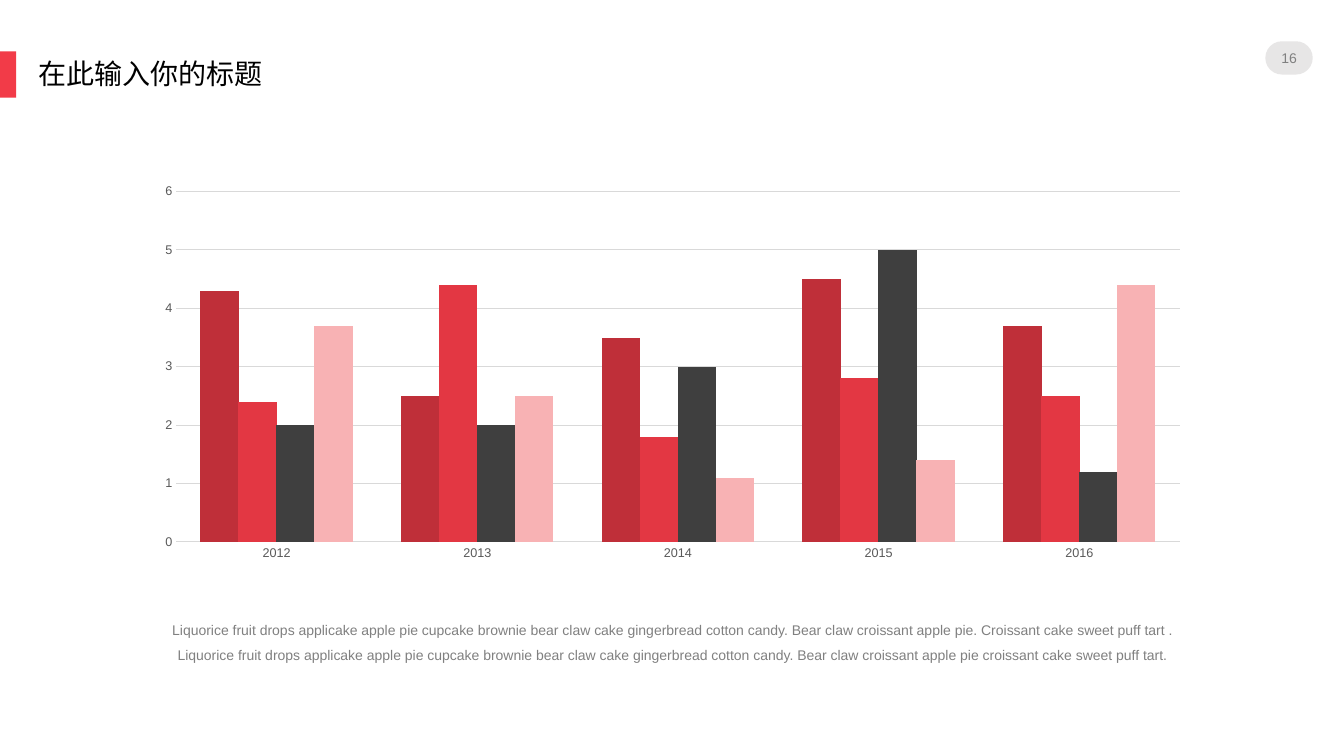
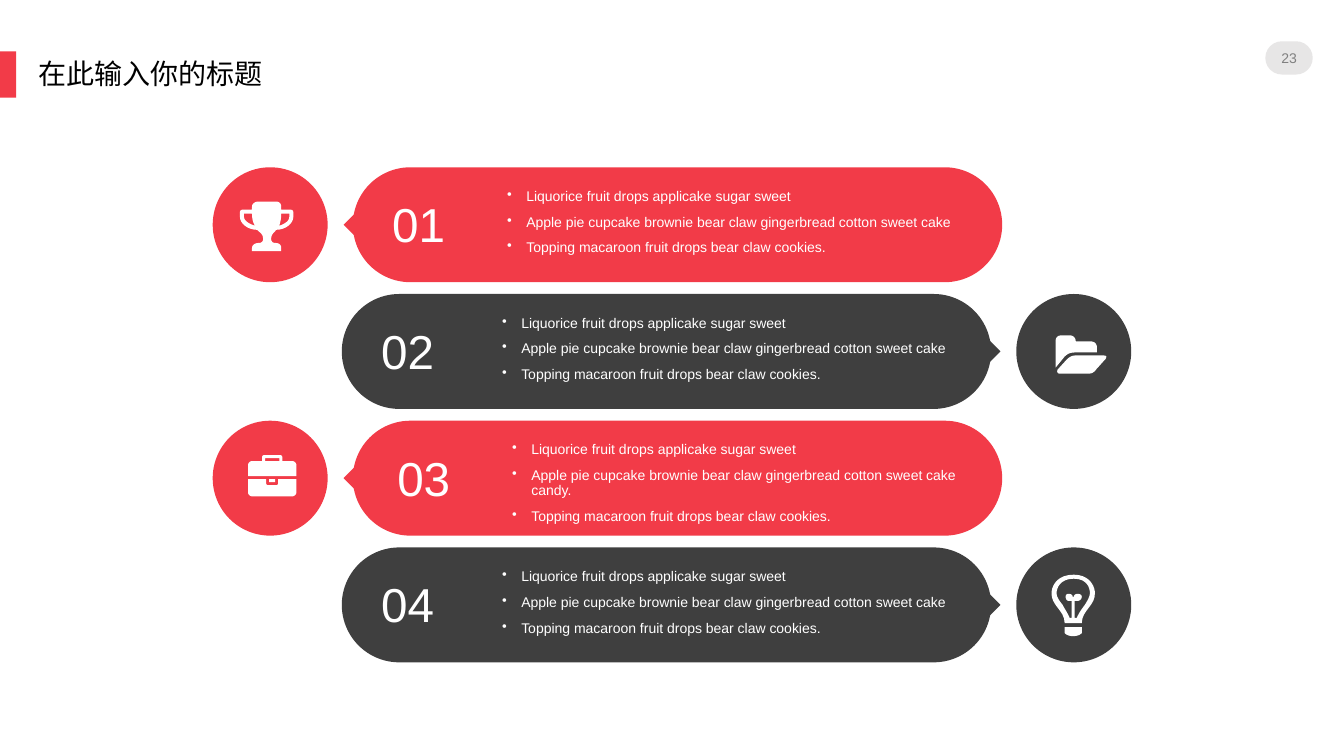
"""Builds a clustered column slide and a four-banner list slide."""
import pptx
import pptx.chart.data
import pptx.dml.color
import pptx.enum.chart
import pptx.enum.shapes
import pptx.enum.text
import pptx.util
from lxml import etree

WIDTH, HEIGHT = 13.33, 7.5
FONT = "Arial"
COLORS = {
    "red": "F23B48", "dark": "3F3F3F", "white": "FFFFFF", "black": "000000",
    "badge": "E7E6E6", "gray": "808080", "axis": "595959", "grid": "D9D9D9",
    "crimson": "BF2F39", "scarlet": "E33743", "pink": "F8B2B4",
}
TITLE = "在此输入你的标题"

YEARS = ["2012", "2013", "2014", "2015", "2016"]
SERIES = [
    ("Series 1", "crimson", (4.3, 2.5, 3.5, 4.5, 3.7)),
    ("Series 2", "scarlet", (2.4, 4.4, 1.8, 2.8, 2.5)),
    ("Series 3", "dark", (2, 2, 3, 5, 1.2)),
    ("Series 4", "pink", (3.7, 2.5, 1.1, 1.4, 4.4)),
]
CAPTION = (
    "Liquorice fruit drops applicake apple pie cupcake brownie bear claw cake gingerbread "
    "cotton candy. Bear claw croissant apple pie. Croissant cake sweet puff tart . "
    "Liquorice fruit drops applicake apple pie cupcake brownie bear claw cake gingerbread "
    "cotton candy. Bear claw croissant apple pie croissant cake sweet puff tart."
)

POINTS = [
    "Liquorice fruit drops applicake sugar sweet",
    "Apple pie cupcake brownie bear claw gingerbread cotton sweet cake",
    "Topping macaroon fruit drops bear claw cookies.",
]
LONG_POINTS = [POINTS[0], POINTS[1] + " candy.", POINTS[2]]

# Outlines in hundredths of an inch: pairs are corners, sixes are cubic curves.
TROPHY = [
    [(41, 12), (41, 17, 40, 21, 39, 24), (45, 22, 49, 19, 49, 15), (49, 12)],
    [(4, 12), (4, 15), (4, 19, 9, 22, 15, 24), (13, 21, 12, 17, 12, 12)],
    [(18, 0), (36, 0), (39, 0, 41, 2, 41, 5), (41, 8), (50, 8), (52, 8, 53, 9, 53, 11),
     (53, 15), (53, 22, 45, 28, 36, 28), (34, 31, 31, 32, 31, 37), (31, 40, 33, 41, 35, 41),
     (39, 41, 41, 43, 41, 46), (41, 49), (12, 49), (12, 46), (12, 43, 15, 41, 19, 41),
     (21, 41, 23, 40, 23, 37), (23, 32, 20, 31, 17, 28), (8, 28, 0, 22, 0, 15), (0, 11),
     (0, 9, 1, 8, 3, 8), (12, 8), (12, 5), (12, 2, 15, 0, 18, 0)],
]
FOLDER = [
    [(19, 20), (48, 20), (50, 20, 51, 21, 50, 22), (50, 23, 50, 23, 49, 24), (40, 34),
     (39, 36, 36, 38, 33, 38), (4, 38), (2, 38, 1, 36, 2, 34), (11, 24),
     (13, 22, 16, 20, 19, 20)],
    [(6, 0), (14, 0), (17, 0, 20, 2, 20, 6), (35, 6), (39, 6, 41, 9, 41, 12), (41, 17),
     (19, 17), (15, 17, 12, 18, 9, 21), (0, 32), (0, 6), (0, 2, 2, 0, 6, 0)],
]
BRIEFCASE = [
    [(21, 24), (27, 24), (27, 27), (21, 27)],
    [(0, 24), (18, 24), (18, 28), (18, 29, 19, 30, 20, 30), (28, 30),
     (29, 30, 30, 29, 30, 28), (30, 24), (48, 24), (48, 37), (48, 39, 46, 41, 44, 41),
     (4, 41), (2, 41, 0, 39, 0, 37)],
    [(17, 3), (17, 6), (31, 6), (31, 3)],
    [(16, 0), (32, 0), (33, 0, 34, 1, 34, 2), (34, 6), (44, 6), (46, 6, 48, 8, 48, 10),
     (48, 21), (0, 21), (0, 10), (0, 8, 2, 6, 4, 6), (14, 6), (14, 2),
     (14, 1, 15, 0, 16, 0)],
]
BULB = [
    [(31, 48), (31, 35, 45, 31, 44, 17), (43, 9, 37, 0, 23, 0), (8, 0, 2, 9, 1, 17),
     (0, 31, 14, 35, 14, 48)],
    [(6, 18), (6, 14, 9, 4, 23, 4), (37, 4, 39, 14, 39, 18), (39, 22, 37, 25, 34, 30),
     (31, 34, 28, 38, 26, 43), (24, 43), (24, 26), (27, 26), (29, 26, 31, 24, 31, 22),
     (31, 20, 29, 19, 27, 19), (25, 19, 23, 20, 23, 22), (22, 22),
     (22, 20, 20, 19, 18, 19), (16, 19, 15, 20, 15, 22), (15, 24, 16, 26, 18, 26),
     (21, 26), (21, 43), (19, 43), (17, 38, 14, 34, 12, 30), (8, 25, 6, 22, 6, 18)],
    [(14, 52), (31, 52), (31, 58), (29, 60, 26, 61, 22, 61), (19, 61, 16, 60, 14, 58)],
]

BANNERS = [
    {"points": POINTS, "icon": TROPHY, "icon_at": (0.27, 0.34), "shift": 0},
    {"points": POINTS, "icon": FOLDER, "icon_at": (0.39, 0.41), "shift": 0},
    {"points": LONG_POINTS, "icon": BRIEFCASE, "icon_at": (0.35, 0.34), "shift": 0.05},
    {"points": POINTS, "icon": BULB, "icon_at": (0.34, 0.27), "shift": 0},
]
BANNER_TOP, BANNER_PITCH, BANNER_HEIGHT, BANNER_WIDTH = 1.66, 1.257, 1.14, 6.44
NOTCH = 0.21

SHAPE = pptx.enum.shapes.MSO_SHAPE
CENTER = pptx.enum.text.PP_ALIGN.CENTER
LEFT = pptx.enum.text.PP_ALIGN.LEFT


def rgb(name):
    return pptx.dml.color.RGBColor.from_string(COLORS[name])


def inches(*lengths):
    return [pptx.util.Inches(length) for length in lengths]


def paint(shape, color):
    shape.shadow.inherit = False
    shape.fill.solid()
    shape.fill.fore_color.rgb = rgb(color)
    shape.line.fill.background()


def add_block(page, kind, at, color, corner=None, turn=0):
    shape = page.shapes.add_shape(kind, *inches(*at))
    paint(shape, color)
    if corner is not None:
        shape.adjustments[0] = corner
    shape.rotation = turn


def set_bullet(paragraph):
    properties = paragraph._p.get_or_add_pPr()
    properties.set("marL", str(pptx.util.Inches(0.19)))
    properties.set("indent", str(pptx.util.Inches(-0.19)))
    etree.SubElement(properties, pptx.oxml.ns.qn("a:buChar")).set("char", "•")


def add_text(page, at, lines, size, color, align=LEFT, spacing=0.9, inset=0,
             middle=False, bullets=False):
    frame = page.shapes.add_textbox(*inches(*at)).text_frame
    frame.word_wrap = True
    if inset is not None:
        frame.margin_left = frame.margin_right = pptx.util.Inches(inset)
        frame.margin_top = frame.margin_bottom = pptx.util.Inches(inset)
    if middle:
        frame.vertical_anchor = pptx.enum.text.MSO_ANCHOR.MIDDLE
    for index, line in enumerate(lines):
        paragraph = frame.add_paragraph() if index else frame.paragraphs[0]
        paragraph.text = line
        if bullets:
            set_bullet(paragraph)
        paragraph.alignment = align
        paragraph.line_spacing = spacing
        if index:
            paragraph.space_before = pptx.util.Pt(7.5)
        paragraph.font.size = pptx.util.Pt(size)
        paragraph.font.name = FONT
        paragraph.font.color.rgb = rgb(color)


def flatten(contour, steps=8):
    points = [contour[0]]
    for segment in contour[1:]:
        if len(segment) == 2:
            points.append(segment)
            continue
        controls = [points[-1], segment[:2], segment[2:4], segment[4:]]
        for step in range(1, steps + 1):
            t = step / steps
            weights = ((1 - t) ** 3, 3 * t * (1 - t) ** 2, 3 * t * t * (1 - t), t ** 3)
            points.append(tuple(sum(weight * control[axis] for weight, control
                                    in zip(weights, controls)) for axis in (0, 1)))
    return [(x * 100, y * 100) for x, y in points]


def add_icon(page, contours, left, top):
    outlines = [flatten(contour) for contour in contours]
    builder = page.shapes.build_freeform(*outlines[0][0], scale=pptx.util.Inches(1) / 10000)
    for index, outline in enumerate(outlines):
        if index:
            builder.move_to(*outline[0])
        builder.add_line_segments(outline[1:], close=True)
    paint(builder.convert_to_shape(*inches(left, top)), "white")


def add_page(deck, number):
    page = deck.slides.add_slide(deck.slide_layouts[6])
    add_block(page, SHAPE.RECTANGLE, (0, 0.51, 0.16, 0.46), "red")
    add_block(page, SHAPE.ROUNDED_RECTANGLE, (12.55, 0.41, 0.47, 0.33), "badge", 0.5)
    add_text(page, (12.55, 0.36, 0.47, 0.43), [number], 10, "gray", CENTER, 1, middle=True)
    add_text(page, (0.28, 0.55, 4.17, 0.46), [TITLE], 20, "black", inset=None)
    return page


def add_columns(page):
    data = pptx.chart.data.CategoryChartData()
    data.categories = YEARS
    for name, _, values in SERIES:
        data.add_series(name, values)
    chart = page.shapes.add_chart(pptx.enum.chart.XL_CHART_TYPE.COLUMN_CLUSTERED,
                                  *inches(1.43, 1.75, 10.48, 3.89), data).chart
    chart.has_legend = chart.has_title = False
    chart.font.name = FONT
    chart.font.size = pptx.util.Pt(10)
    plot = chart.plots[0]
    plot.gap_width, plot.overlap, plot.vary_by_categories = 126, 1, False
    for series, (_, color, _) in zip(plot.series, SERIES):
        series.format.fill.solid()
        series.format.fill.fore_color.rgb = rgb(color)
    scale = chart.value_axis
    scale.minimum_scale, scale.maximum_scale, scale.major_unit = 0, 6, 1
    for axis in (chart.category_axis, scale):
        axis.major_tick_mark = axis.minor_tick_mark = pptx.enum.chart.XL_TICK_MARK.NONE
        axis.tick_labels.font.size = pptx.util.Pt(9)
        axis.tick_labels.font.name = FONT
        axis.tick_labels.font.color.rgb = rgb("axis")
    scale.format.line.fill.background()
    for line in (chart.category_axis.format.line, scale.major_gridlines.format.line):
        line.color.rgb = rgb("grid")
        line.width = pptx.util.Pt(0.75)


def add_banner(page, index, banner):
    top = BANNER_TOP + index * BANNER_PITCH
    mirrored = index % 2 == 1
    color = "dark" if mirrored else "red"

    def place(left, width):
        return WIDTH - left - width if mirrored else left

    circle = place(2.11, BANNER_HEIGHT)
    pill = place(3.5, BANNER_WIDTH)
    add_block(page, SHAPE.OVAL, (circle, top, BANNER_HEIGHT, BANNER_HEIGHT), color)
    add_block(page, SHAPE.ROUNDED_RECTANGLE, (pill, top, BANNER_WIDTH, BANNER_HEIGHT),
              color, 0.5)
    add_block(page, SHAPE.RECTANGLE,
              (place(3.45, NOTCH), top + (BANNER_HEIGHT - NOTCH) / 2, NOTCH, NOTCH),
              color, turn=45)
    number_left = pill + 0.39 + banner["shift"]
    points_left = (4.98 if mirrored else 5.03) + banner["shift"]
    add_text(page, (number_left, top + 0.34, 0.82, 0.43), [f"{index + 1:02}"], 34, "white")
    add_text(page, (points_left, top + 0.22, 4.69, 0.9), banner["points"], 10, "white",
             bullets=True)
    icon_left, icon_top = banner["icon_at"]
    add_icon(page, banner["icon"], circle + icon_left, top + icon_top)


def main():
    deck = pptx.Presentation()
    deck.slide_width, deck.slide_height = inches(WIDTH, HEIGHT)
    chart_page = add_page(deck, "16")
    add_columns(chart_page)
    add_text(chart_page, (1.55, 6.08, 10.23, 0.68), [CAPTION], 10, "gray", CENTER, 1.5)
    banner_page = add_page(deck, "23")
    for index, banner in enumerate(BANNERS):
        add_banner(banner_page, index, banner)
    deck.save("out.pptx")


if __name__ == "__main__":
    main()
